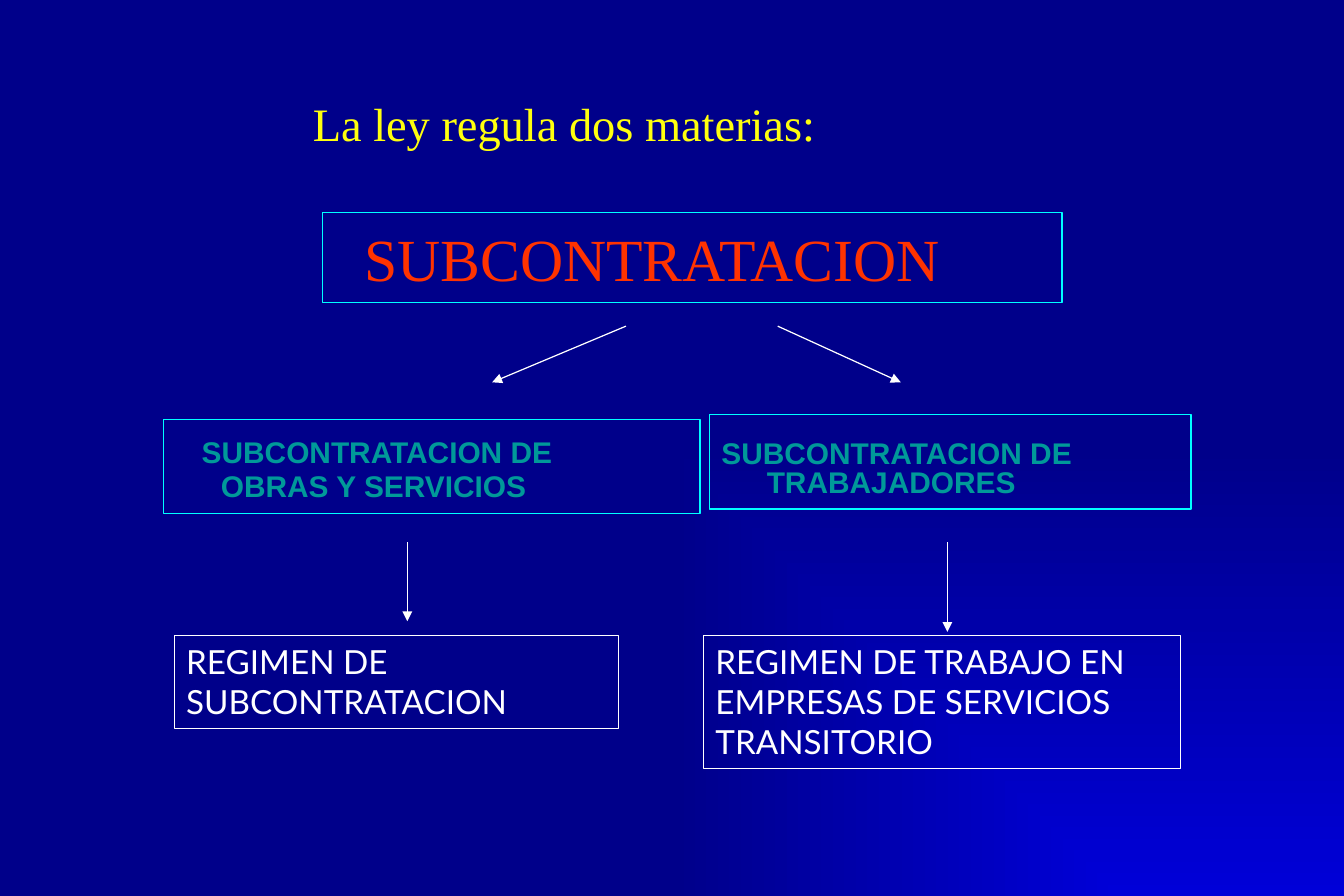
from lxml import etree
from pptx import Presentation
from pptx.dml.color import RGBColor
from pptx.enum.shapes import MSO_CONNECTOR
from pptx.enum.text import MSO_ANCHOR
from pptx.oxml.ns import qn
from pptx.util import Pt

PX = 9144  # EMU in one px, 100 px to the inch
LINE = MSO_CONNECTOR.STRAIGHT
TOP, MIDDLE, BOTTOM = MSO_ANCHOR.TOP, MSO_ANCHOR.MIDDLE, MSO_ANCHOR.BOTTOM
SERIF, SANS, BODY = "Times New Roman", "Arial", "Lato"
COLORS = {
    "glow": "0000D8",
    "navy": "00008A",
    "cyan": "00FFFF",
    "red": "FF3300",
    "teal": "009999",
    "white": "FFFFFF",
    "yellow": "FFFF0E",
}


def color(name):
    return RGBColor.from_string(COLORS[name])


def paint_back(slide):
    """Fill the background with a gradient that spreads from the lower right corner."""
    fill = slide.background.fill
    fill.gradient()
    for stop, name, place in zip(fill.gradient_stops, ("glow", "navy"), (0, 1)):
        stop.color.rgb = color(name)
        stop.position = place
    grad = slide.element.find(".//" + qn("a:gradFill"))
    lin = grad.find(qn("a:lin"))
    spread = etree.Element(qn("a:path"), {"path": "rect"})
    etree.SubElement(spread, qn("a:fillToRect"), {"l": "100000", "t": "100000"})
    grad.replace(lin, spread)


def add_text(slide, box, text, font, size, ink, edge=None, bold=False,
             anchor=TOP, top=5, left=0, indent=0, spacing=1.0):
    """Add a text box; left and indent are the paragraph's margin and first line."""
    shape = slide.shapes.add_textbox(*(n * PX for n in box))
    if edge:
        shape.line.color.rgb = color(edge)
        shape.line.width = Pt(0.75)
    frame = shape.text_frame
    frame.word_wrap = True
    frame.vertical_anchor = anchor
    frame.margin_top = top * PX
    para = frame.paragraphs[0]
    para.text = text
    para.line_spacing = spacing
    para.font.name = font
    para.font.size = Pt(size)
    para.font.bold = bold
    para.font.color.rgb = color(ink)
    props = para._p.get_or_add_pPr()
    props.set("marL", str(left * PX))
    props.set("indent", str(indent * PX))


def add_arrow(slide, *ends):
    arrow = slide.shapes.add_connector(LINE, *(n * PX for n in ends))
    arrow.line.color.rgb = color("white")
    arrow.line.width = Pt(0.75)
    etree.SubElement(arrow.line._get_or_add_ln(), qn("a:tailEnd"), {"type": "triangle"})
    etree.SubElement(arrow._element.spPr, qn("a:effectLst"))


def main():
    deck = Presentation()
    deck.slide_width, deck.slide_height = 1125 * PX, 750 * PX
    slide = deck.slides.add_slide(deck.slide_layouts[6])
    paint_back(slide)

    add_text(slide, (252, 52, 611, 79), "La ley regula dos materias:",
             SERIF, 28, "yellow", anchor=BOTTOM)
    add_text(slide, (270, 178, 619, 75), "SUBCONTRATACION",
             SERIF, 36, "red", "cyan", anchor=MIDDLE, left=25)

    add_text(slide, (137, 351, 449, 79), "SUBCONTRATACION DE\vOBRAS Y SERVICIOS",
             SANS, 18, "teal", "cyan", bold=True, top=15, left=38, indent=-16, spacing=0.93)
    add_text(slide, (594, 347, 403, 79), "SUBCONTRATACION DE TRABAJADORES",
             SANS, 18, "teal", "cyan", bold=True, top=23, left=38, indent=-38, spacing=0.8)

    add_text(slide, (146, 532, 372, 78), "REGIMEN DE SUBCONTRATACION",
             BODY, 20, "white", "white")
    add_text(slide, (589, 532, 399, 111),
             "REGIMEN DE TRABAJO EN EMPRESAS DE SERVICIOS TRANSITORIO",
             BODY, 20, "white", "white")

    for ends in ((524, 273, 412, 320), (651, 273, 754, 320),
                 (341, 454, 341, 520), (793, 454, 793, 529)):
        add_arrow(slide, *ends)

    deck.save("out.pptx")


if __name__ == "__main__":
    main()
